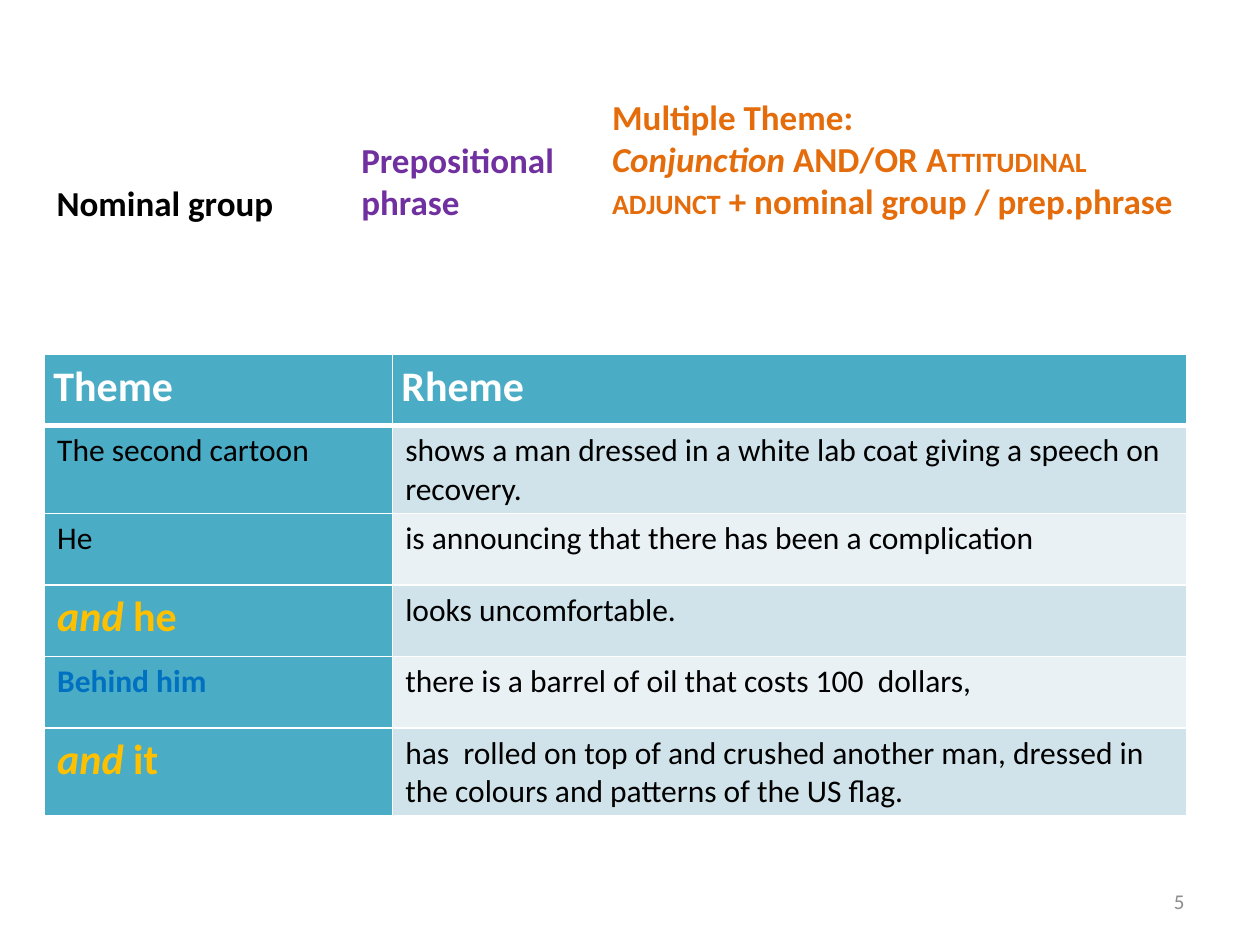
from lxml.etree import SubElement
from pptx import Presentation
from pptx.dml.color import RGBColor
from pptx.enum.text import MSO_ANCHOR, MSO_AUTO_SIZE, PP_ALIGN
from pptx.oxml import parse_xml
from pptx.oxml.ns import nsdecls, qn
from pptx.util import Pt

FONT = "Calibri"
BLACK, WHITE, TEAL = "000000", "FFFFFF", "4BACC6"
PURPLE, ORANGE, YELLOW, BLUE, GREY = "7030A0", "E46C0A", "FFC000", "0070C0", "8C8C8C"
BANDS = ["D0E3EA", "E9F1F5"]
COLUMN_WIDTHS = [198.9, 453.5]
ROW_HEIGHT = 40.8

HEADINGS = ["Theme", "Rheme"]
CLAUSES = [
    ("", "The second cartoon", BLACK,
     "shows a man dressed in a white lab coat giving a speech on recovery."),
    ("", "He", BLACK, "is announcing that there has been a complication"),
    ("and", " he", YELLOW, "looks uncomfortable."),
    ("", "Behind him", BLUE, "there is a barrel of oil that costs 100  dollars,"),
    ("and", " it", YELLOW,
     "has  rolled on top of and crushed another man, dressed in the colours "
     "and patterns of the US flag."),
]


def color(value):
    """Turn a hex string into a colour."""
    return RGBColor.from_string(value)


def add_text(paragraph, text, size, hex_color, bold=False, italic=False, small_caps=False):
    """Append one formatted run to a paragraph."""
    run = paragraph.add_run()
    run.text = text
    font = run.font
    font.name, font.size, font.bold, font.italic = FONT, Pt(size), bold, italic
    font.color.rgb = color(hex_color)
    if small_caps:
        run._r.get_or_add_rPr().set("cap", "small")


def add_text_box(slide, left, top, width, height):
    """Add an empty wrapping text box and return its text frame."""
    frame = slide.shapes.add_textbox(Pt(left), Pt(top), Pt(width), Pt(height)).text_frame
    frame.word_wrap = True
    frame.auto_size = MSO_AUTO_SIZE.SHAPE_TO_FIT_TEXT
    return frame


def add_label(slide, text, hex_color, left, top, width, height):
    """Add a bold one-paragraph label and return its text frame."""
    frame = add_text_box(slide, left, top, width, height)
    add_text(frame.paragraphs[0], text, 20, hex_color, bold=True)
    return frame


def add_multiple_theme(slide):
    """Add the label that explains the multiple theme."""
    frame = add_label(slide, "Multiple Theme:", ORANGE, 342.7, 51.1, 345.6, 79.9)
    paragraph = frame.add_paragraph()
    add_text(paragraph, "Conjunction", 20, ORANGE, bold=True, italic=True)
    add_text(paragraph, " AND/OR ", 20, ORANGE, bold=True)
    add_text(paragraph, "Attitudinal adjunct", 20, ORANGE, bold=True, small_caps=True)
    add_text(paragraph, " + nominal group / prep.phrase", 20, ORANGE, bold=True)


def format_cell(cell, fill, top=1, bottom=1):
    """Fill a cell and give it white borders."""
    cell.fill.solid()
    cell.fill.fore_color.rgb = color(fill)
    properties = cell._tc.get_or_add_tcPr()
    widths = {"lnL": 1, "lnR": 1, "lnT": top, "lnB": bottom}
    for index, (side, width) in enumerate(widths.items()):
        line = parse_xml(f'<a:{side} {nsdecls("a")} w="{Pt(width)}"/>')
        solid = SubElement(line, qn("a:solidFill"))
        SubElement(solid, qn("a:srgbClr"), val=WHITE)
        properties.insert(index, line)


def fill_header(table):
    """Write the heading row."""
    for cell, heading in zip(table.rows[0].cells, HEADINGS):
        format_cell(cell, TEAL, bottom=3)
        cell.margin_left = cell.margin_right = Pt(5)
        cell.margin_top = cell.margin_bottom = Pt(0)
        paragraph = cell.text_frame.paragraphs[0]
        paragraph.alignment = PP_ALIGN.JUSTIFY
        paragraph.line_spacing = 1.15
        add_text(paragraph, heading, 24, WHITE, bold=True)


def fill_clause(table, row, conjunction, theme, theme_color, rheme):
    """Write one clause split into theme and rheme."""
    theme_cell, rheme_cell = table.rows[row].cells
    top = 3 if row == 1 else 1
    format_cell(theme_cell, TEAL, top)
    format_cell(rheme_cell, BANDS[(row - 1) % 2], top)
    paragraph = theme_cell.text_frame.paragraphs[0]
    size = 24 if conjunction else 18
    if conjunction:
        add_text(paragraph, conjunction, size, theme_color, bold=True, italic=True)
    add_text(paragraph, theme, size, theme_color, bold=theme_color != BLACK)
    add_text(rheme_cell.text_frame.paragraphs[0], rheme, 18, BLACK)


def add_clause_table(slide):
    """Add the table of themes and rhemes."""
    count = len(CLAUSES) + 1
    table = slide.shapes.add_table(count, 2, Pt(25.5), Pt(202.3),
                                   Pt(sum(COLUMN_WIDTHS)), Pt(count * ROW_HEIGHT)).table
    for column, width in zip(table.columns, COLUMN_WIDTHS):
        column.width = Pt(width)
    for row in table.rows:
        row.height = Pt(ROW_HEIGHT)
    fill_header(table)
    for row, clause in enumerate(CLAUSES, start=1):
        fill_clause(table, row, *clause)


def add_page_number(slide, number):
    """Add the page number at the bottom right."""
    frame = add_text_box(slide, 516, 500.5, 168, 28.75)
    frame.auto_size = MSO_AUTO_SIZE.NONE
    frame.vertical_anchor = MSO_ANCHOR.MIDDLE
    paragraph = frame.paragraphs[0]
    paragraph.alignment = PP_ALIGN.RIGHT
    add_text(paragraph, number, 12, GREY)


def main():
    """Build the slide and save it."""
    presentation = Presentation()
    presentation.slide_width, presentation.slide_height = Pt(720), Pt(540)
    slide = presentation.slides.add_slide(presentation.slide_layouts[6])
    add_label(slide, "Nominal group", BLACK, 25.2, 100.1, 147.6, 31.5)
    add_label(slide, "Prepositional phrase", PURPLE, 199.4, 75.6, 153.4, 55.7)
    add_multiple_theme(slide)
    add_clause_table(slide)
    add_page_number(slide, "5")
    presentation.save("out.pptx")


if __name__ == "__main__":
    main()
